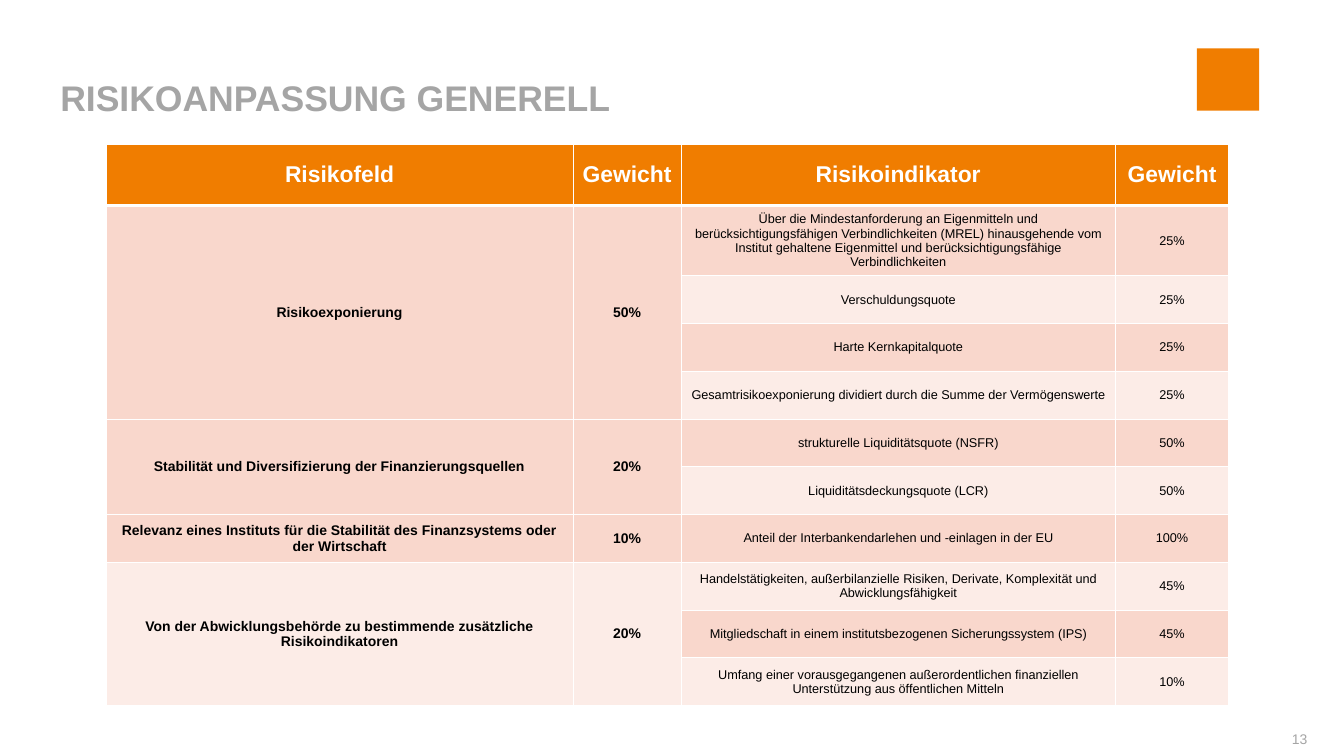
"""Slide with the risk fields, their indicators and the weights of both."""
from dataclasses import dataclass

from lxml.etree import SubElement
from pptx import Presentation
from pptx.dml.color import RGBColor as Rgb
from pptx.enum.shapes import MSO_SHAPE as Shape
from pptx.enum.text import MSO_ANCHOR as Anchor, PP_ALIGN as Align
from pptx.oxml.ns import qn
from pptx.util import Inches, Pt


@dataclass(frozen=True)
class Theme:
    font: str = "Arial"
    accent: str = "F07D00"
    grey: str = "A5A5A5"
    white: str = "FFFFFF"
    black: str = "000000"
    bands: tuple = ("F9D7CC", "FCECE7")
    title: int = 28
    header: int = 18
    field: int = 11
    indicator: int = 10
    number: int = 11


def write(frame, text, size, color, bold=False, align=Align.CENTER, spacing=None):
    """Fill a text frame with one formatted paragraph."""
    paragraph = frame.paragraphs[0]
    paragraph.alignment = align
    paragraph.line_spacing = spacing
    run = paragraph.add_run()
    run.text = text
    run.font.name = theme.font
    run.font.size = Pt(size)
    run.font.bold = bold
    run.font.color.rgb = Rgb.from_string(color)


def paint(cell, color, bottom=1):
    """Give a cell white edges, a fill and centred height."""
    properties = cell._tc.get_or_add_tcPr()
    for edge, width in (("L", 1), ("R", 1), ("T", 1), ("B", bottom)):
        line = SubElement(properties, qn(f"a:ln{edge}"), w=str(Pt(width)))
        SubElement(SubElement(line, qn("a:solidFill")), qn("a:srgbClr"), val=theme.white)
    cell.fill.solid()
    cell.fill.fore_color.rgb = Rgb.from_string(color)
    cell.vertical_anchor = Anchor.MIDDLE


theme = Theme()
headings = ["Risikofeld", "Gewicht", "Risikoindikator", "Gewicht"]
risk_fields = [
    ("Risikoexponierung", "50%", [
        ("Über die Mindestanforderung an Eigenmitteln und berücksichtigungsfähigen "
         "Verbindlichkeiten (MREL) hinausgehende vom Institut gehaltene Eigenmittel "
         "und berücksichtigungsfähige Verbindlichkeiten", "25%"),
        ("Verschuldungsquote", "25%"),
        ("Harte Kernkapitalquote", "25%"),
        ("Gesamtrisikoexponierung dividiert durch die Summe der Vermögenswerte", "25%"),
    ]),
    ("Stabilität und Diversifizierung der Finanzierungsquellen", "20%", [
        ("strukturelle Liquiditätsquote (NSFR)", "50%"),
        ("Liquiditätsdeckungsquote (LCR)", "50%"),
    ]),
    ("Relevanz eines Instituts für die Stabilität des Finanzsystems oder der Wirtschaft",
     "10%", [
         ("Anteil der Interbankendarlehen und -einlagen in der EU", "100%"),
     ]),
    ("Von der Abwicklungsbehörde zu bestimmende zusätzliche Risikoindikatoren", "20%", [
        ("Handelstätigkeiten, außerbilanzielle Risiken, Derivate, Komplexität und "
         "Abwicklungsfähigkeit", "45%"),
        ("Mitgliedschaft in einem institutsbezogenen Sicherungssystem (IPS)", "45%"),
        ("Umfang einer vorausgegangenen außerordentlichen finanziellen Unterstützung "
         "aus öffentlichen Mitteln", "10%"),
    ]),
]

deck = Presentation()
deck.slide_width, deck.slide_height = Inches(14.7), Inches(8.27)
col, row = deck.slide_width // 100, deck.slide_height // 100
slide = deck.slides.add_slide(deck.slide_layouts[6])

side = int(4.63 * col)
square = slide.shapes.add_shape(
    Shape.RECTANGLE, int(89.05 * col), int(6.41 * row), side, side)
square.shadow.inherit = False
square.fill.solid()
square.fill.fore_color.rgb = Rgb.from_string(theme.accent)
square.line.fill.background()

captions = [
    ("RISIKOANPASSUNG GENERELL", (4.49, 10.88, 81.5, 4.84), Anchor.BOTTOM,
     dict(size=theme.title, bold=True, align=Align.LEFT, spacing=0.85)),
    ("13", (85.51, 96.61, 11.77, 2.3), Anchor.MIDDLE,
     dict(size=theme.number, align=Align.RIGHT)),
]
for text, (left, top, width, height), anchor, style in captions:
    frame = slide.shapes.add_textbox(
        int(left * col), int(top * row), int(width * col), int(height * row)).text_frame
    frame.word_wrap = True
    frame.vertical_anchor = anchor
    frame.margin_left = frame.margin_right = frame.margin_top = frame.margin_bottom = 0
    write(frame, text, color=theme.grey, **style)

widths = [34.76, 8.03, 32.31, 8.44]
indicator_count = sum(len(indicators) for _, _, indicators in risk_fields)
heights = [8.1, 8.83] + [6.32] * (indicator_count - 1)
table = slide.shapes.add_table(
    len(heights), len(widths), int(7.89 * col), int(19.1 * row),
    int(sum(widths) * col), int(sum(heights) * row)).table
for table_column, width in zip(table.columns, widths):
    table_column.width = int(width * col)
for table_row, height in zip(table.rows, heights):
    table_row.height = int(height * row)

for index, heading in enumerate(headings):
    cell = table.cell(0, index)
    paint(cell, theme.accent, bottom=3)
    write(cell.text_frame, heading, theme.header, theme.white, bold=True)

first = 1
for field, field_weight, indicators in risk_fields:
    last = first + len(indicators) - 1
    field_band = theme.bands[(first - 1) % 2]
    for index, text in enumerate((field, field_weight)):
        for line_number in range(first, last + 1):
            paint(table.cell(line_number, index), field_band)
        cell = table.cell(first, index)
        if last > first:
            cell.merge(table.cell(last, index))
        write(cell.text_frame, text, theme.field, theme.black, bold=True)
    for line_number, indicator in enumerate(indicators, first):
        for index, text in enumerate(indicator, 2):
            cell = table.cell(line_number, index)
            paint(cell, theme.bands[(line_number - 1) % 2])
            write(cell.text_frame, text, theme.indicator, theme.black)
    first = last + 1

deck.save("out.pptx")
